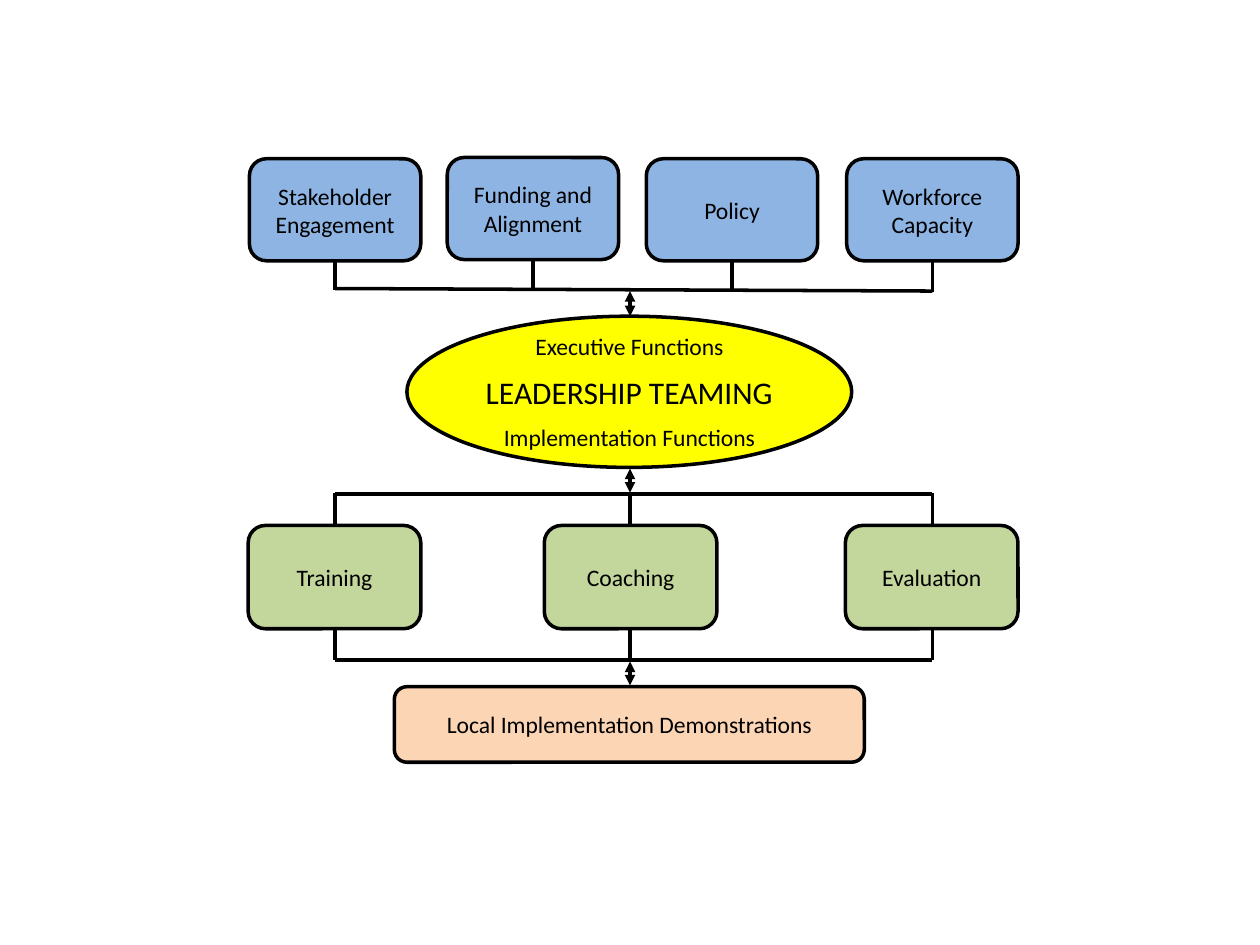
"""Build a slide showing how leadership teaming links system supports to local demonstrations."""
from dataclasses import dataclass

from lxml import etree
from pptx import Presentation
from pptx.dml.color import RGBColor
from pptx.enum.shapes import MSO_CONNECTOR, MSO_SHAPE
from pptx.enum.text import MSO_ANCHOR, PP_ALIGN
from pptx.oxml.ns import qn
from pptx.slide import Slide
from pptx.util import Inches, Pt

ROUND = MSO_SHAPE.ROUNDED_RECTANGLE
OVAL = MSO_SHAPE.OVAL
STRAIGHT = MSO_CONNECTOR.STRAIGHT
MIDDLE = MSO_ANCHOR.MIDDLE
CENTER = PP_ALIGN.CENTER


@dataclass(frozen=True)
class Theme:
    font: str = "Calibri"
    ink: RGBColor = RGBColor(0x00, 0x00, 0x00)
    blue: RGBColor = RGBColor(0x8E, 0xB4, 0xE3)
    yellow: RGBColor = RGBColor(0xFF, 0xFF, 0x00)
    green: RGBColor = RGBColor(0xC3, 0xD6, 0x9B)
    peach: RGBColor = RGBColor(0xFC, 0xD5, 0xB5)
    body: float = 13.5
    title: float = 18
    line: float = 2


THEME = Theme()


@dataclass(frozen=True)
class Node:
    text: str
    left: float
    top: float
    width: float
    height: float
    fill: RGBColor | None
    shape: MSO_SHAPE = ROUND
    size: float = THEME.body


@dataclass(frozen=True)
class Link:
    x1: float
    y1: float
    x2: float
    y2: float
    arrows: bool = False


MID_X, LEFT_X, RIGHT_X = 5, 2.66, 7.4
SUPPORTS = [
    ("Stakeholder Engagement", 1.98, 1.26),
    ("Funding and Alignment", 3.55, 1.25),
    ("Policy", 5.13, 1.26),
    ("Workforce Capacity", 6.72, 1.26),
]
DRIVERS = [("Training", 1.97), ("Coaching", 4.32), ("Evaluation", 6.71)]

NODES = [
    *(Node(text, x, y, 1.36, 0.81, THEME.blue) for text, x, y in SUPPORTS),
    Node("LEADERSHIP TEAMING", 3.23, 2.51, 3.53, 1.2, THEME.yellow, OVAL, THEME.title),
    Node("Executive Functions", 3.44, 2.5, 3.11, 0.5, None, OVAL),
    Node("Implementation Functions", 3.44, 3.22, 3.11, 0.5, None, OVAL),
    *(Node(text, x, 4.17, 1.37, 0.82, THEME.green) for text, x in DRIVERS),
    Node("Local Implementation Demonstrations", 3.13, 5.45, 3.73, 0.6, THEME.peach),
]

LINKS = [
    *(Link(x, 2.07, x, y) for x, y in ((LEFT_X, 2.3), (4.23, 2.29), (5.81, 2.31), (RIGHT_X, 2.32))),
    Link(LEFT_X, 2.29, RIGHT_X, 2.31),
    *(Link(x, y1, x, y2) for x in (LEFT_X, MID_X, RIGHT_X) for y1, y2 in ((3.91, 4.17), (4.98, 5.24))),
    *(Link(LEFT_X, y, RIGHT_X, y) for y in (3.92, 5.24)),
    *(Link(MID_X, y1, MID_X, y2, True) for y1, y2 in ((2.31, 2.51), (3.72, 3.91), (5.25, 5.44))),
]


def draw_node(s: Slide, node: Node) -> None:
    """Draw one labelled shape."""
    sp = s.shapes.add_shape(
        node.shape, Inches(node.left), Inches(node.top), Inches(node.width), Inches(node.height)
    )
    sp.shadow.inherit = False
    if node.fill is None:
        sp.fill.background()
        sp.line.fill.background()
    else:
        sp.fill.solid()
        sp.fill.fore_color.rgb = node.fill
        sp.line.color.rgb = THEME.ink
        sp.line.width = Pt(THEME.line)
    tf = sp.text_frame
    tf.word_wrap = node.shape == ROUND
    tf.vertical_anchor = MIDDLE
    p = tf.paragraphs[0]
    p.text = node.text
    p.alignment = CENTER
    p.font.name = THEME.font
    p.font.size = Pt(node.size)
    p.font.color.rgb = THEME.ink


def draw_link(s: Slide, link: Link) -> None:
    """Draw one straight connector, with arrowheads at both ends if asked."""
    cxn = s.shapes.add_connector(
        STRAIGHT, Inches(link.x1), Inches(link.y1), Inches(link.x2), Inches(link.y2)
    )
    cxn.line.color.rgb = THEME.ink
    cxn.line.width = Pt(THEME.line)
    if link.arrows:
        ln = cxn.line._get_or_add_ln()
        for end in ("a:headEnd", "a:tailEnd"):
            etree.SubElement(ln, qn(end), type="triangle")
    etree.SubElement(cxn._element.spPr, qn("a:effectLst"))


def main() -> None:
    """Build and save the slide."""
    prs = Presentation()
    prs.slide_width, prs.slide_height = Inches(10), Inches(7.5)
    s = prs.slides.add_slide(prs.slide_layouts[6])
    for node in NODES:
        draw_node(s, node)
    for link in LINKS:
        draw_link(s, link)
    prs.save("out.pptx")


if __name__ == "__main__":
    main()
